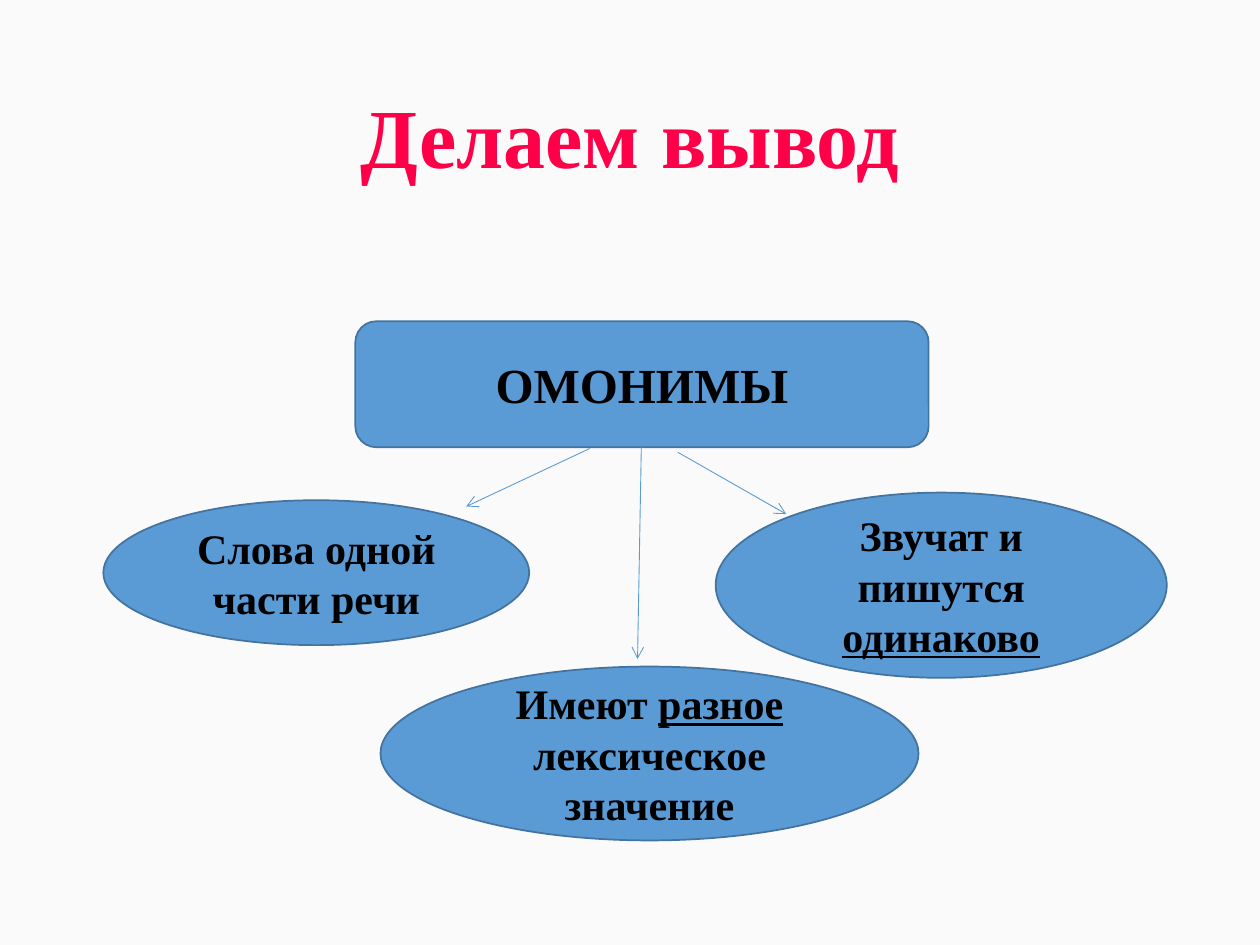
from dataclasses import dataclass

from lxml import etree
from pptx import Presentation
from pptx.dml.color import RGBColor
from pptx.enum.shapes import MSO_CONNECTOR, MSO_SHAPE
from pptx.enum.text import MSO_ANCHOR, PP_ALIGN
from pptx.oxml.ns import qn
from pptx.util import Pt

PX = 9144
STRAIGHT = MSO_CONNECTOR.STRAIGHT
ROUNDED, OVAL = MSO_SHAPE.ROUNDED_RECTANGLE, MSO_SHAPE.OVAL
MIDDLE, CENTER = MSO_ANCHOR.MIDDLE, PP_ALIGN.CENTER
TITLE_ONLY = 5


@dataclass(frozen=True)
class Theme:
    font: str = "Times New Roman"
    background: str = "FAFAFA"
    accent: str = "FF0048"
    fill: str = "5B9BD5"
    outline: str = "43739E"
    text: str = "000000"
    title_size: int = 48
    topic_size: int = 28
    trait_size: int = 24
    outline_width: float = 1
    arrow_width: float = 0.5


def rgb(value):
    return RGBColor.from_string(value)


class Deck:
    """Builds slides in one theme, with lengths in hundredths of an inch."""

    def __init__(self, theme, width, height):
        self.theme = theme
        self.prs = Presentation()
        self.prs.slide_width, self.prs.slide_height = width * PX, height * PX

    def add_slide(self):
        self.s = self.prs.slides.add_slide(self.prs.slide_layouts[TITLE_ONLY])
        fill = self.s.background.fill
        fill.solid()
        fill.fore_color.rgb = rgb(self.theme.background)

    def format_text(self, tf, size, color):
        tf.word_wrap = True
        tf.vertical_anchor = MIDDLE
        for p in tf.paragraphs:
            p.alignment = CENTER
            for r in p.runs:
                r.font.name = self.theme.font
                r.font.size = Pt(size)
                r.font.bold = True
                r.font.color.rgb = rgb(color)

    def title(self, box, text):
        sp = self.s.shapes.title
        sp.left, sp.top, sp.width, sp.height = (v * PX for v in box)
        tf = sp.text_frame
        tf.text = text
        tf.paragraphs[0].line_spacing = 0.9
        self.format_text(tf, self.theme.title_size, self.theme.accent)

    def node(self, kind, box, parts, size):
        sp = self.s.shapes.add_shape(kind, *(v * PX for v in box))
        sp.shadow.inherit = False
        sp.fill.solid()
        sp.fill.fore_color.rgb = rgb(self.theme.fill)
        sp.line.color.rgb = rgb(self.theme.outline)
        sp.line.width = Pt(self.theme.outline_width)
        p = sp.text_frame.paragraphs[0]
        for text, underlined in parts:
            r = p.add_run()
            r.text = text
            r.font.underline = underlined
        self.format_text(sp.text_frame, size, self.theme.text)

    def arrow(self, start, end):
        cxn = self.s.shapes.add_connector(STRAIGHT, *(v * PX for v in start + end))
        cxn.line.color.rgb = rgb(self.theme.fill)
        cxn.line.width = Pt(self.theme.arrow_width)
        etree.SubElement(cxn.line._get_or_add_ln(), qn("a:tailEnd"), type="arrow")
        etree.SubElement(cxn._element.spPr, qn("a:effectLst"))

    def save(self):
        self.prs.save("out.pptx")


TRAITS = [
    ((82, 397, 338, 115), [("Слова одной части речи", False)]),
    ((568, 391, 358, 147), [("Звучат и пишутся ", False), ("одинаково", True)]),
    ((302, 529, 427, 138),
     [("Имеют ", False), ("разное ", True), ("лексическое значение", False)]),
]
ARROWS = [
    ((468, 356), (370, 402)),
    ((538, 359), (624, 408)),
    ((509, 355), (506, 523)),
]


def main():
    theme = Theme()
    deck = Deck(theme, 1000, 750)
    deck.add_slide()
    deck.title((69, 40, 862, 145), "Делаем вывод")
    deck.node(ROUNDED, (282, 255, 455, 100), [("ОМОНИМЫ", False)], theme.topic_size)
    for box, parts in TRAITS:
        deck.node(OVAL, box, parts, theme.trait_size)
    for start, end in ARROWS:
        deck.arrow(start, end)
    deck.save()


if __name__ == "__main__":
    main()
